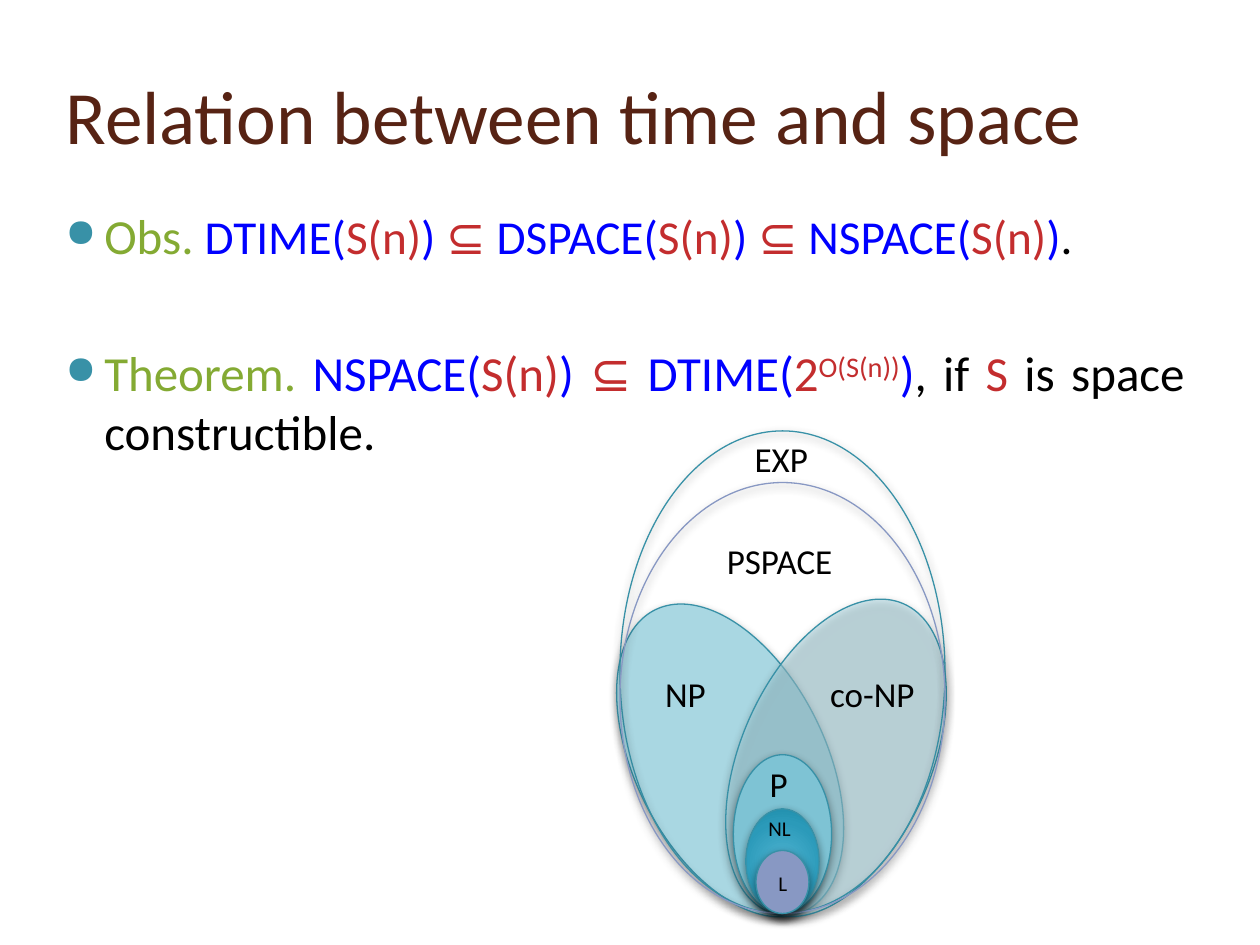
import pptx
import pptx.util
import pptx.oxml
from pptx.dml.color import RGBColor
from pptx.enum.shapes import MSO_SHAPE
from pptx.enum.text import MSO_ANCHOR, PP_ALIGN
from pptx.oxml.ns import nsdecls, qn
from pptx.util import Inches, Pt

FONT = "Calibri"
BROWN = RGBColor(0x57, 0x23, 0x14)
GREEN = RGBColor(0x84, 0xAA, 0x33)
BLUE = RGBColor(0x00, 0x00, 0xFF)
RED = RGBColor(0xC3, 0x2D, 0x2E)
BLACK = RGBColor(0x00, 0x00, 0x00)
TEAL = RGBColor(0x38, 0x91, 0xA7)
PALE = RGBColor(0xA9, 0xD7, 0xE2)
AQUA = RGBColor(0x7E, 0xC3, 0xD4)
LAVENDER = RGBColor(0x88, 0x98, 0xC3)
DEEP_STOPS = [(0, "45ACCC"), (15, "45ACCB"), (62, "2B9AB9"), (97, "1C8AA7"), (100, "0E89A7")]

TITLE = "Relation between time and space"


def class_runs(name, bound="S(n)", power=""):
    """Runs for a complexity class such as DTIME(S(n))."""
    runs = [(name + "(", BLUE), (bound, RED)]
    if power:
        runs.append((power, RED, 30))
    return runs + [(")", BLUE)]


SUBSET = [(" ", BLUE), ("⊆ ", RED)]
# lead word, size of the rest, space before, runs
STATEMENTS = [
    ("Obs. ", 27, 6,
     class_runs("DTIME") + SUBSET + class_runs("DSPACE") + SUBSET
     + class_runs("NSPACE") + [(".", BLACK)]),
    ("Theorem. ", 28, 45,
     class_runs("NSPACE") + SUBSET + class_runs("DTIME", "2", "O(S(n))")
     + [(", if ", BLACK), ("S", RED), (" is space constructible.", BLACK)]),
]

# Nested sets share a centre line and a bottom edge: width, height, fill, line, label
CENTRE, BOTTOM = 6.21, 7.25
# Tilted sets: left, top, rotation, opacity in percent
TILTED_SIZE = (1.51, 2.67)
TILTED = [(5.04, 4.7, 333.5, 100), (5.88, 4.68, 23.7, 50)]
INNER_P = (0.78, 1.26, AQUA, TEAL)
# Label: text, left, top, width, size
P_LABELS = [("NP", 5.18, 5.29, 0.6, 20), ("co-NP", 6.49, 5.29, 1.12, 20),
            ("P", 6.01, 6, 0.6, 20)]
NESTED = [
    ((2.58, 3.83, None, TEAL), ("EXP", 5.89, 3.42, 0.86, 20)),
    ((2.58, 3.42, None, LAVENDER), ("PSPACE", 5.67, 4.23, 1.17, 20)),
    ((0.58, 0.83, DEEP_STOPS, TEAL), ("NL", 6, 6.42, 0.42, 12)),
    ((0.42, 0.5, LAVENDER, TEAL), ("L", 6.08, 6.86, 0.25, 12)),
]


def add_text(paragraph, text, size, color=BLACK, baseline=0):
    run = paragraph.add_run()
    run.text = text
    run.font.name = FONT
    run.font.size = Pt(size)
    run.font.color.rgb = color
    if baseline:
        run.font._element.set("baseline", str(baseline * 1000))


def add_bullet(paragraph):
    props = paragraph._p.get_or_add_pPr()
    props.set("marL", str(Inches(0.4)))
    props.set("indent", str(Inches(-0.31)))
    for xml in (f'<a:buClr {nsdecls("a")}><a:srgbClr val="{TEAL}"/></a:buClr>',
                f'<a:buSzPct {nsdecls("a")} val="80000"/>',
                f'<a:buChar {nsdecls("a")} char="●"/>'):
        props.append(pptx.oxml.parse_xml(xml))


def fill_radial(shape, stops):
    shape.fill.gradient()
    old = shape._element.spPr.find(qn("a:gradFill"))
    marks = "".join(f'<a:gs pos="{pos * 1000}"><a:srgbClr val="{color}"/></a:gs>'
                    for pos, color in stops)
    old.getparent().replace(old, pptx.oxml.parse_xml(
        f'<a:gradFill {nsdecls("a")}><a:gsLst>{marks}</a:gsLst><a:path path="circle">'
        '<a:fillToRect l="50000" t="50000" r="50000" b="50000"/></a:path></a:gradFill>'))


def add_set(slide, left, top, width, height, fill, line, rotation=0, opacity=100):
    oval = slide.shapes.add_shape(MSO_SHAPE.OVAL, Inches(left), Inches(top),
                                  Inches(width), Inches(height))
    oval.rotation = rotation
    if fill is None:
        oval.fill.background()
    elif isinstance(fill, list):
        fill_radial(oval, fill)
    else:
        oval.fill.solid()
        oval.fill.fore_color.rgb = fill
        if opacity < 100:
            color = oval._element.spPr.find(qn("a:solidFill"))[0]
            color.append(pptx.oxml.parse_xml(
                f'<a:alpha {nsdecls("a")} val="{opacity * 1000}"/>'))
    oval.line.color.rgb = line
    oval.line.width = Pt(0.75)
    oval.shadow.inherit = False
    oval._element.spPr.find(qn("a:effectLst")).append(pptx.oxml.parse_xml(
        f'<a:outerShdw {nsdecls("a")} blurRad="{Pt(5)}" dist="{Pt(2)}" dir="5400000" '
        'rotWithShape="0"><a:srgbClr val="000000"><a:alpha val="43000"/></a:srgbClr>'
        '</a:outerShdw>'))


def add_nested(slide, width, height, fill, line):
    add_set(slide, CENTRE - width / 2, BOTTOM - height, width, height, fill, line)


def add_label(slide, text, left, top, width, size):
    box = slide.shapes.add_textbox(Inches(left), Inches(top), Inches(width),
                                   Inches(0.44 if size == 20 else 0.3))
    box.text_frame.word_wrap = True
    add_text(box.text_frame.paragraphs[0], text, size)


def main():
    deck = pptx.Presentation()
    deck.slide_width, deck.slide_height = Inches(10), Inches(7.5)
    slide = deck.slides.add_slide(deck.slide_layouts[5])

    title = slide.shapes.title
    title.left, title.top = Inches(0.42), Inches(0.33)
    title.width, title.height = Inches(8.83), Inches(1.15)
    title.text_frame.vertical_anchor = MSO_ANCHOR.MIDDLE
    heading = title.text_frame.paragraphs[0]
    heading.alignment = PP_ALIGN.LEFT
    add_text(heading, TITLE, 43, color=BROWN)

    body = slide.shapes.add_textbox(Inches(0.33), Inches(1.58), Inches(9.17), Inches(5.5))
    frame = body.text_frame
    frame.word_wrap = True
    for number, (lead, size, gap, runs) in enumerate(STATEMENTS):
        statement = frame.add_paragraph() if number else frame.paragraphs[0]
        statement.alignment = PP_ALIGN.JUSTIFY
        statement.space_before = Pt(gap)
        add_bullet(statement)
        add_text(statement, lead, 28, color=GREEN)
        for text, color, *raised in runs:
            add_text(statement, text, size, color=color, baseline=sum(raised))

    for left, top, rotation, opacity in TILTED:
        add_set(slide, left, top, *TILTED_SIZE, PALE, TEAL, rotation, opacity)
    add_nested(slide, *INNER_P)
    for label in P_LABELS:
        add_label(slide, *label)
    for oval, label in NESTED:
        add_nested(slide, *oval)
        add_label(slide, *label)

    deck.save("out.pptx")


if __name__ == "__main__":
    main()
